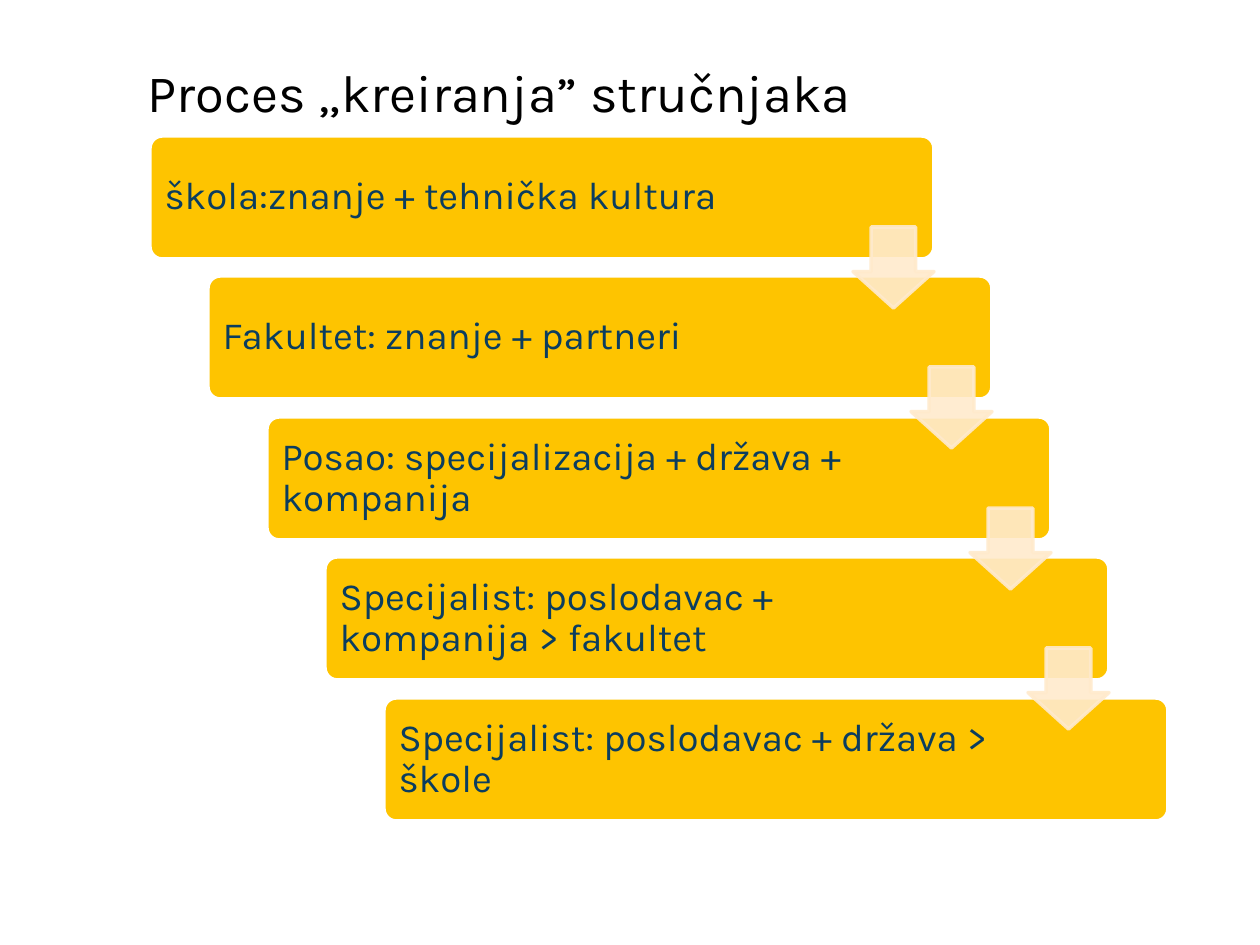
from dataclasses import dataclass

from lxml.etree import SubElement
from pptx import Presentation
from pptx.dml.color import RGBColor
from pptx.enum.shapes import MSO_SHAPE as Shape
from pptx.enum.text import MSO_ANCHOR as Anchor, MSO_AUTO_SIZE as AutoSize, PP_ALIGN as Align
from pptx.oxml.ns import qn
from pptx.util import Emu, Pt

PX_PER_INCH = 126
FONT = "Karla"
BLACK = RGBColor(0x00, 0x00, 0x00)
WHITE = RGBColor(0xFF, 0xFF, 0xFF)
YELLOW = RGBColor(0xFE, 0xC4, 0x00)
CREAM = RGBColor(0xFF, 0xEA, 0xCC)
NAVY = RGBColor(0x0B, 0x3D, 0x5F)

STEP_WIDTH, STEP_HEIGHT = 784, 123
ARROW_SIZE = 81
ARROW_OFFSET_X, ARROW_OFFSET_Y = 703, 91


@dataclass
class Step:
    text: str
    left: int
    top: int


STEP_TEXTS = [
    "škola:znanje + tehnička kultura",
    "Fakultet: znanje + partneri",
    "Posao: specijalizacija + država + kompanija",
    "Specijalist: poslodavac + kompanija > fakultet",
    "Specijalist: poslodavac + država > škole",
]
STEPS = [
    Step(text, 150 + 117 * index // 2, 136 + 281 * index // 2)
    for index, text in enumerate(STEP_TEXTS)
]


def px(value: int) -> Emu:
    return Emu(round(value * 914400 / PX_PER_INCH))


def format_text(text_frame, text: str, size: int, color: RGBColor) -> None:
    text_frame.text = text
    paragraph = text_frame.paragraphs[0]
    paragraph.alignment = Align.LEFT
    font = paragraph.runs[0].font
    font.name = FONT
    font.size = Pt(size)
    font.color.rgb = color


def add_filled_shape(slide, kind, left: int, top: int, width: int, height: int,
                     fill: RGBColor, line: RGBColor):
    shape = slide.shapes.add_shape(kind, px(left), px(top), px(width), px(height))
    shape.shadow.inherit = False
    shape.fill.solid()
    shape.fill.fore_color.rgb = fill
    shape.line.color.rgb = line
    shape.line.width = Pt(2)
    return shape


def add_step(slide, step: Step) -> None:
    box = add_filled_shape(slide, Shape.ROUNDED_RECTANGLE, step.left, step.top,
                           STEP_WIDTH, STEP_HEIGHT, YELLOW, WHITE)
    box.adjustments[0] = 0.1
    text_frame = box.text_frame
    text_frame.word_wrap = True
    text_frame.vertical_anchor = Anchor.MIDDLE
    text_frame.margin_left = text_frame.margin_top = text_frame.margin_bottom = px(11)
    text_frame.margin_right = px(152)  # keeps the text clear of the arrow
    format_text(text_frame, step.text, 22, NAVY)
    text_frame.paragraphs[0].line_spacing = 0.9


def add_arrow(slide, step: Step) -> None:
    """Add the translucent arrow that leads from a step to the next one."""
    arrow = add_filled_shape(slide, Shape.DOWN_ARROW, step.left + ARROW_OFFSET_X,
                             step.top + ARROW_OFFSET_Y, ARROW_SIZE, ARROW_SIZE, CREAM, CREAM)
    arrow.adjustments[0] = 0.55
    arrow.adjustments[1] = 0.45
    for color in arrow.element.spPr.iter(qn("a:srgbClr")):
        SubElement(color, qn("a:alpha"), val="90000")


def set_title(slide, text: str) -> None:
    title = slide.shapes.title
    title.left, title.top, title.width, title.height = px(135), px(47), px(925), px(110)
    text_frame = title.text_frame
    text_frame.auto_size = AutoSize.NONE
    text_frame.vertical_anchor = Anchor.TOP
    text_frame.margin_top = px(13)
    format_text(text_frame, text, 30, BLACK)


def main() -> None:
    presentation = Presentation()
    presentation.slide_width, presentation.slide_height = px(1260), px(945)
    slide = presentation.slides.add_slide(presentation.slide_layouts[5])
    set_title(slide, "Proces „kreiranja” stručnjaka")
    for step in STEPS:
        add_step(slide, step)
    for step in STEPS[:-1]:
        add_arrow(slide, step)
    presentation.save("out.pptx")


if __name__ == "__main__":
    main()
